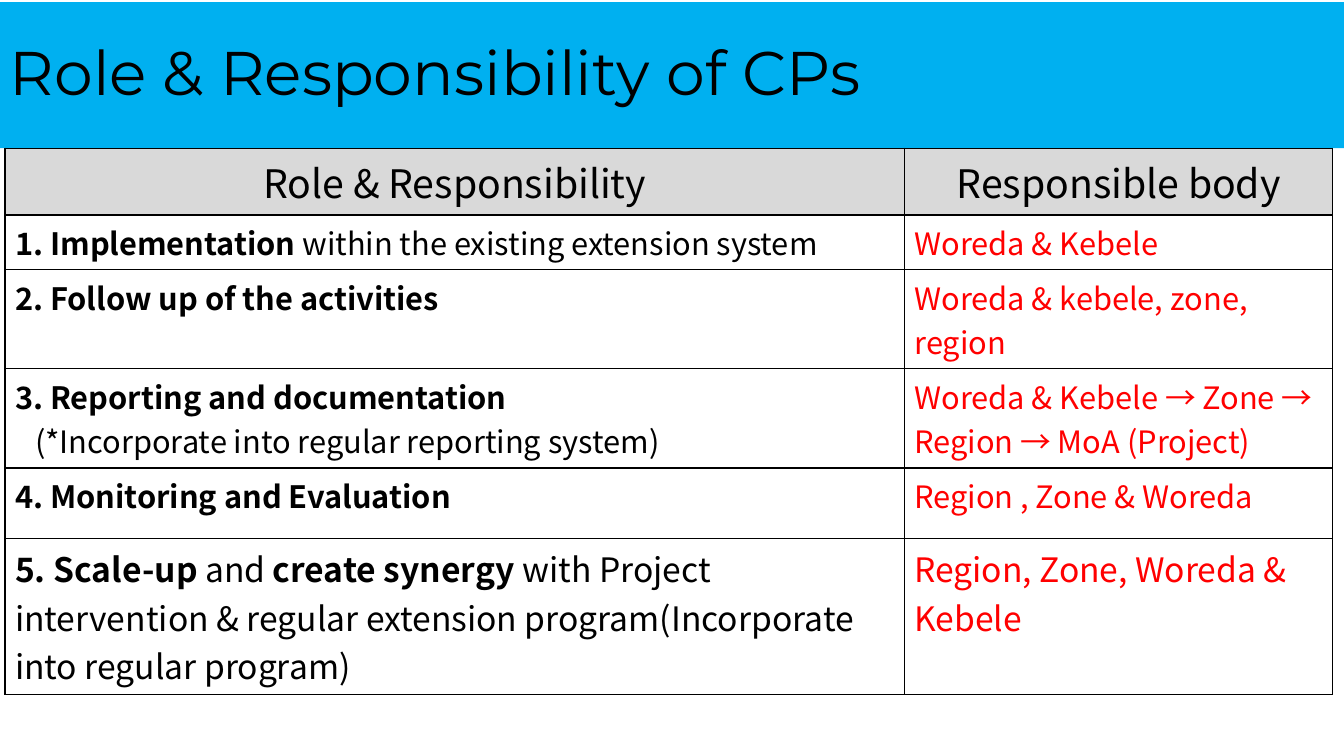
from dataclasses import dataclass

from lxml import etree
from pptx import Presentation
from pptx import util as u
from pptx.dml.color import RGBColor
from pptx.enum import shapes, text
from pptx.oxml.ns import qn

GRID_COLUMNS, GRID_ROWS = 1333, 750
SLIDE_WIDTH, SLIDE_HEIGHT = u.Inches(13.33), u.Inches(7.5)


@dataclass(frozen=True)
class Theme:
    banner: str = "00B0F0"
    header: str = "D9D9D9"
    ink: str = "000000"
    accent: str = "FF0000"
    title_font: str = "Montserrat"
    body_font: str = "Noto Sans CJK JP"
    title_size: int = 44
    header_size: int = 28
    body_size: int = 22
    large_size: int = 24
    border_width: int = 1


THEME = Theme()


@dataclass(frozen=True)
class Span:
    words: str
    bold: bool = False


@dataclass(frozen=True)
class Line:
    spans: tuple[Span, ...]
    indent: int = 0


@dataclass(frozen=True)
class Duty:
    lines: tuple[Line, ...]
    responsible: str
    rows: int
    size: int = THEME.body_size


HEADINGS = ("Role & Responsibility", "Responsible body")
HEADING_ROWS = 66
TABLE_LEFT, TABLE_TOP = 5, 147
TABLE_COLUMNS = (892, 425)
BANNER_TOP = 2

DUTIES = (
    Duty((Line((Span("1. Implementation", True),
                Span(" within the existing extension system"))),),
         "Woreda & Kebele", 54),
    Duty((Line((Span("2. Follow up of the activities", True),)),),
         "Woreda & kebele, zone, region", 98),
    Duty((Line((Span("3. Reporting and documentation", True),)),
          Line((Span("(*Incorporate into regular reporting system)"),), indent=20)),
         "Woreda & Kebele → Zone → Region → MoA (Project)", 98),
    Duty((Line((Span("4. Monitoring and Evaluation", True),)),),
         "Region , Zone & Woreda", 70),
    Duty((Line((Span("5. Scale-up", True), Span(" and "),
                Span("create synergy ", True),
                Span("with Project intervention & regular extension "
                     "program(Incorporate into regular program)"))),),
         "Region, Zone, Woreda & Kebele", 155, THEME.large_size),
)


def across(columns: int) -> u.Emu:
    return u.Emu(round(SLIDE_WIDTH * columns / GRID_COLUMNS))


def down(rows: int) -> u.Emu:
    return u.Emu(round(SLIDE_HEIGHT * rows / GRID_ROWS))


def style_paragraph(paragraph, font_name: str, size: int, color: str) -> None:
    font = paragraph.font
    font.size = u.Pt(size)
    font.color.rgb = RGBColor.from_string(color)
    font.name = font_name
    defaults = paragraph._p.pPr.find(qn("a:defRPr"))
    etree.SubElement(defaults, qn("a:ea"), typeface=font_name)


def draw_borders(cell) -> None:
    properties = cell._tc.get_or_add_tcPr()
    for position, side in enumerate(("lnL", "lnR", "lnT", "lnB")):
        border = etree.Element(qn(f"a:{side}"), w=str(u.Pt(THEME.border_width)))
        fill = etree.SubElement(border, qn("a:solidFill"))
        etree.SubElement(fill, qn("a:srgbClr"), val=THEME.ink)
        properties.insert(position, border)


def fill_cell(cell, lines: tuple[Line, ...], size: int, color: str,
              background: str | None = None, centered: bool = False) -> None:
    if background:
        cell.fill.solid()
        cell.fill.fore_color.rgb = RGBColor.from_string(background)
    else:
        cell.fill.background()
    draw_borders(cell)
    frame = cell.text_frame
    for index, line in enumerate(lines):
        paragraph = frame.add_paragraph() if index else frame.paragraphs[0]
        if centered:
            paragraph.alignment = text.PP_ALIGN.CENTER
        if line.indent:
            paragraph._p.get_or_add_pPr().set("marL", str(across(line.indent)))
        style_paragraph(paragraph, THEME.body_font, size, color)
        for span in line.spans:
            run = paragraph.add_run()
            run.text = span.words
            run.font.bold = span.bold


def add_banner(slide, title: str) -> None:
    shape = slide.shapes.add_shape(
        shapes.MSO_SHAPE.RECTANGLE, 0, down(BANNER_TOP),
        SLIDE_WIDTH, down(TABLE_TOP - BANNER_TOP))
    shape.shadow.inherit = False
    shape.fill.solid()
    shape.fill.fore_color.rgb = RGBColor.from_string(THEME.banner)
    shape.line.fill.background()
    frame = shape.text_frame
    frame.word_wrap = True
    frame.vertical_anchor = text.MSO_ANCHOR.MIDDLE
    paragraph = frame.paragraphs[0]
    paragraph.text = title
    paragraph.alignment = text.PP_ALIGN.LEFT
    paragraph.line_spacing = 0.9
    style_paragraph(paragraph, THEME.title_font, THEME.title_size, THEME.ink)


def add_duties_table(slide) -> None:
    heights = (HEADING_ROWS, *(duty.rows for duty in DUTIES))
    table = slide.shapes.add_table(
        len(heights), len(TABLE_COLUMNS), across(TABLE_LEFT), down(TABLE_TOP),
        across(sum(TABLE_COLUMNS)), down(sum(heights))).table
    table.first_row = table.horz_banding = False
    for column, width in zip(table.columns, TABLE_COLUMNS):
        column.width = across(width)
    for row, height in zip(table.rows, heights):
        row.height = down(height)
    for column, heading in enumerate(HEADINGS):
        fill_cell(table.cell(0, column), (Line((Span(heading),)),),
                  THEME.header_size, THEME.ink, THEME.header, centered=True)
    for row, duty in enumerate(DUTIES, start=1):
        fill_cell(table.cell(row, 0), duty.lines, duty.size, THEME.ink)
        fill_cell(table.cell(row, 1), (Line((Span(duty.responsible),)),),
                  duty.size, THEME.accent)


def main() -> None:
    presentation = Presentation()
    presentation.slide_width = SLIDE_WIDTH
    presentation.slide_height = SLIDE_HEIGHT
    slide = presentation.slides.add_slide(presentation.slide_layouts[6])
    add_banner(slide, "Role & Responsibility of CPs")
    add_duties_table(slide)
    presentation.save("out.pptx")


if __name__ == "__main__":
    main()
